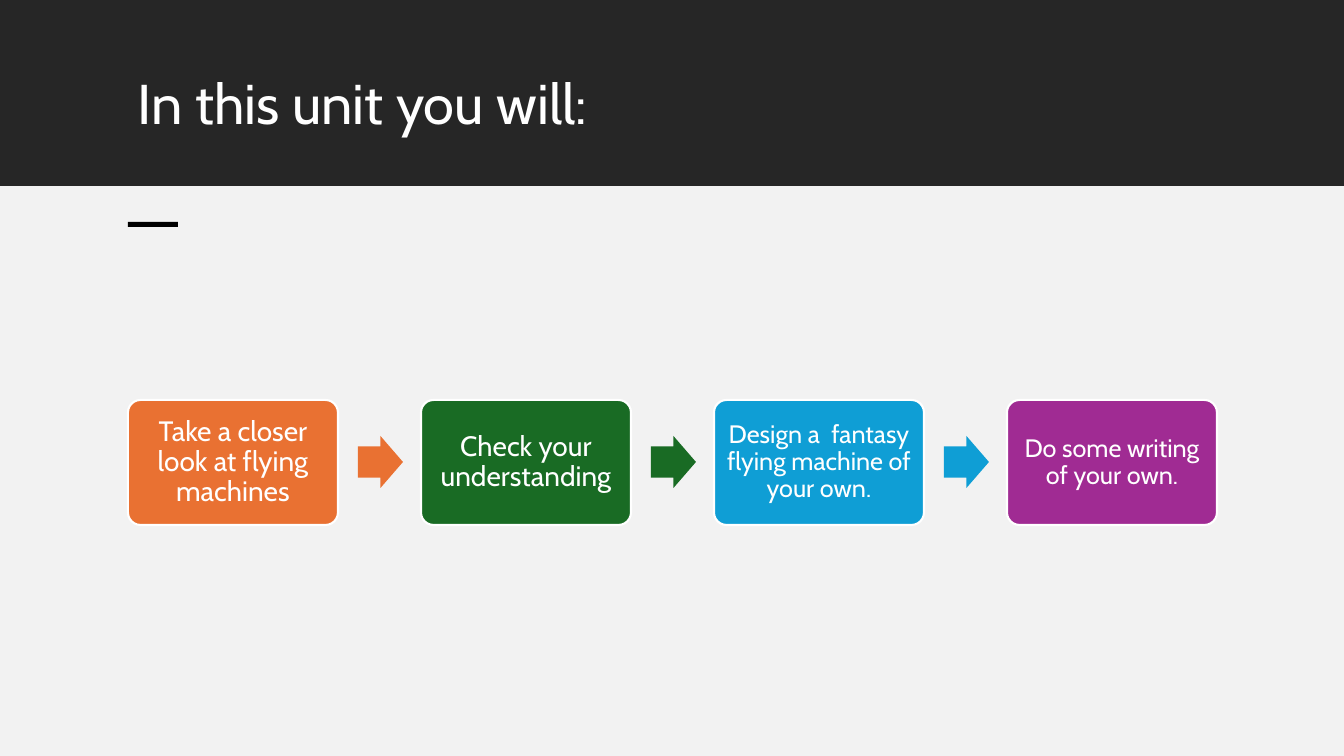
from pptx import Presentation
from pptx.dml.color import RGBColor
from pptx.enum.shapes import MSO_SHAPE
from pptx.enum.text import MSO_ANCHOR, PP_ALIGN
from pptx.util import Emu, Pt

RECTANGLE = MSO_SHAPE.RECTANGLE
ROUNDED = MSO_SHAPE.ROUNDED_RECTANGLE
ARROW = MSO_SHAPE.RIGHT_ARROW
TOP, MIDDLE = MSO_ANCHOR.TOP, MSO_ANCHOR.MIDDLE
LEFT, CENTER = PP_ALIGN.LEFT, PP_ALIGN.CENTER

EMU_PER_PX = 914400 / 100.8
COLORS = {
    "white": "FFFFFF", "header": "262626", "body": "F2F2F2", "accent": "000000",
    "orange": "E97132", "green": "196B24", "blue": "0F9ED5", "purple": "A02B93",
}


def px(*lengths):
    return [Emu(round(length * EMU_PER_PX)) for length in lengths]


def add_block(kind, box, color, adjustments=()):
    """Add a filled preset shape without outline or shadow."""
    block = slide.shapes.add_shape(kind, *px(*box))
    block.shadow.inherit = False
    block.fill.solid()
    block.fill.fore_color.rgb = RGBColor.from_string(COLORS[color])
    block.line.fill.background()
    for index, value in enumerate(adjustments):
        block.adjustments[index] = value
    return block


prs = Presentation()
prs.slide_width, prs.slide_height = px(1344, 756)
slide = prs.slides.add_slide(prs.slide_layouts[6])

add_block(RECTANGLE, (0, 0, 1344, 186), "header")
add_block(RECTANGLE, (0, 186, 1344, 570), "body")
add_block(RECTANGLE, (128, 222, 50, 5), "accent")
title = slide.shapes.add_textbox(*px(128, 71, 1090, 99))

# Each text: holder, wording, size, alignment, anchor, side inset, vertical inset
texts = [(title, "In this unit you will:", 40, LEFT, TOP, 10, 5)]

STEPS = [
    ("Take a closer look at flying machines", 20, "orange", 8),
    ("Check your understanding", 20, "green", 8),
    ("Design a  fantasy flying machine of your own.", 18, "blue", 7),
    ("Do some writing of your own.", 18, "purple", 7),
]
STEP_LEFT, STEP_PITCH, ARROW_OFFSET = 128, 293, 230

for number, (wording, size, color, inset) in enumerate(STEPS):
    left = STEP_LEFT + number * STEP_PITCH
    step = add_block(ROUNDED, (left, 400, 210, 125), color, [0.1])
    step.line.color.rgb = RGBColor.from_string(COLORS["white"])
    step.line.width = Pt(1.5)
    texts.append((step, wording, size, CENTER, MIDDLE, inset, inset))
    if number < len(STEPS) - 1:
        add_block(ARROW, (left + ARROW_OFFSET, 436, 45, 52), color, [0.6, 0.5])

for holder, wording, size, alignment, anchor, side, vertical in texts:
    frame = holder.text_frame
    side_inset, vertical_inset = px(side, vertical)
    frame_format = {
        "word_wrap": True, "vertical_anchor": anchor,
        "margin_left": side_inset, "margin_right": side_inset,
        "margin_top": vertical_inset, "margin_bottom": vertical_inset,
    }
    for name, value in frame_format.items():
        setattr(frame, name, value)
    paragraph = frame.paragraphs[0]
    paragraph.alignment = alignment
    paragraph.line_spacing = 0.9
    run = paragraph.add_run()
    run.text = wording
    run.font.name = "Cabin"
    run.font.size = Pt(size)
    run.font.color.rgb = RGBColor.from_string(COLORS["white"])

prs.save("out.pptx")
